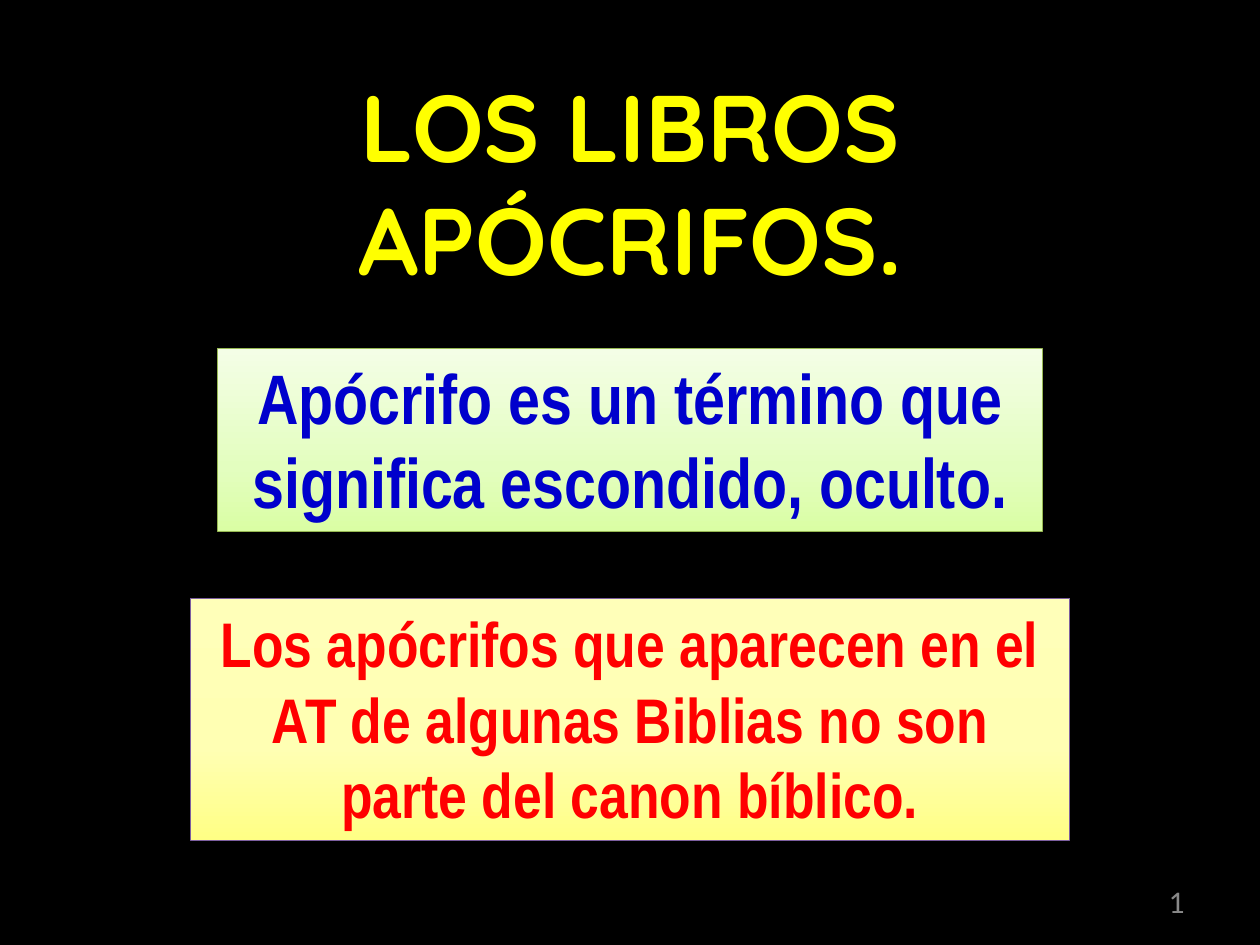
from copy import deepcopy

from pptx import Presentation
from pptx.dml.color import RGBColor
from pptx.enum.shapes import MSO_SHAPE
from pptx.enum.text import MSO_ANCHOR as Anchor, MSO_AUTO_SIZE as AutoSize, PP_ALIGN as Align
from pptx.oxml.ns import qn
from pptx.util import Cm, Pt

PAGE_WIDTH, PAGE_HEIGHT = 25.4, 19.05
BACKGROUND = "000000"

TITLE = {
    "text": "LOS LIBROS APÓCRIFOS.", "top": 1.24, "width": 14.96, "height": 4.88,
    "font": {"name": "Quicksand", "size": Pt(54), "bold": True}, "color": "FFFF00",
}
PANELS = [
    {
        "text": "Apócrifo es un término que significa escondido, oculto.",
        "top": 7.03, "width": 16.64, "height": 3.68,
        "font": {"name": "Arial Narrow", "size": Pt(40), "bold": True}, "color": "0000CC",
        "stops": [(0, "DAFEA4"), (0.35, "E3FEBF"), (1, "F4FEE6")], "line": "97B853",
    },
    {
        "text": "Los apócrifos que aparecen en el AT de algunas Biblias no son parte del canon bíblico.",
        "top": 12.06, "width": 17.73, "height": 4.88,
        "font": {"name": "Arial Narrow", "size": Pt(36), "bold": True}, "color": "FF0000",
        "stops": [(0, "FFFF85"), (0.38, "FFFFB3"), (1, "FFFFB9")], "line": "7C5F9F",
    },
]
NUMBER = {
    "text": "1", "left": 18.2, "top": 17.66, "width": 5.93, "height": 1.01,
    "font": {"name": "Calibri", "size": Pt(18), "bold": False}, "color": "888888",
}


def rgb(value):
    return RGBColor.from_string(value)


def bounds(item):
    left = item.get("left", (PAGE_WIDTH - item["width"]) / 2)
    return [Cm(value) for value in (left, item["top"], item["width"], item["height"])]


def write(box, item, align=Align.CENTER, anchor=Anchor.TOP, fit=AutoSize.SHAPE_TO_FIT_TEXT):
    frame = box.text_frame
    layout = {"word_wrap": True, "vertical_anchor": anchor, "auto_size": fit}
    for name, value in layout.items():
        setattr(frame, name, value)
    para = frame.paragraphs[0]
    para.alignment = align
    span = para.add_run()
    span.text = item["text"]
    for name, value in item["font"].items():
        setattr(span.font, name, value)
    span.font.color.rgb = rgb(item["color"])


def paint_gradient(box, stops):
    box.fill.gradient()
    box.fill.gradient_angle = 90
    stop_list = next(box.element.spPr.iter(qn("a:gsLst")))
    while len(stop_list) < len(stops):
        stop_list.append(deepcopy(stop_list[0]))
    for stop, (position, color) in zip(box.fill.gradient_stops, stops):
        stop.position = position
        stop.color.rgb = rgb(color)


deck = Presentation()
deck.slide_width, deck.slide_height = Cm(PAGE_WIDTH), Cm(PAGE_HEIGHT)
page = deck.slides.add_slide(deck.slide_layouts[5])
page.background.fill.solid()
page.background.fill.fore_color.rgb = rgb(BACKGROUND)

title = page.shapes.title
title.left, title.top, title.width, title.height = bounds(TITLE)
write(title, TITLE)

for panel in PANELS:
    box = page.shapes.add_shape(MSO_SHAPE.RECTANGLE, *bounds(panel))
    box.shadow.inherit = False
    paint_gradient(box, panel["stops"])
    box.line.color.rgb = rgb(panel["line"])
    box.line.width = Pt(0.75)
    write(box, panel)

number = page.shapes.add_textbox(*bounds(NUMBER))
write(number, NUMBER, Align.RIGHT, Anchor.MIDDLE, AutoSize.NONE)

deck.save("out.pptx")
